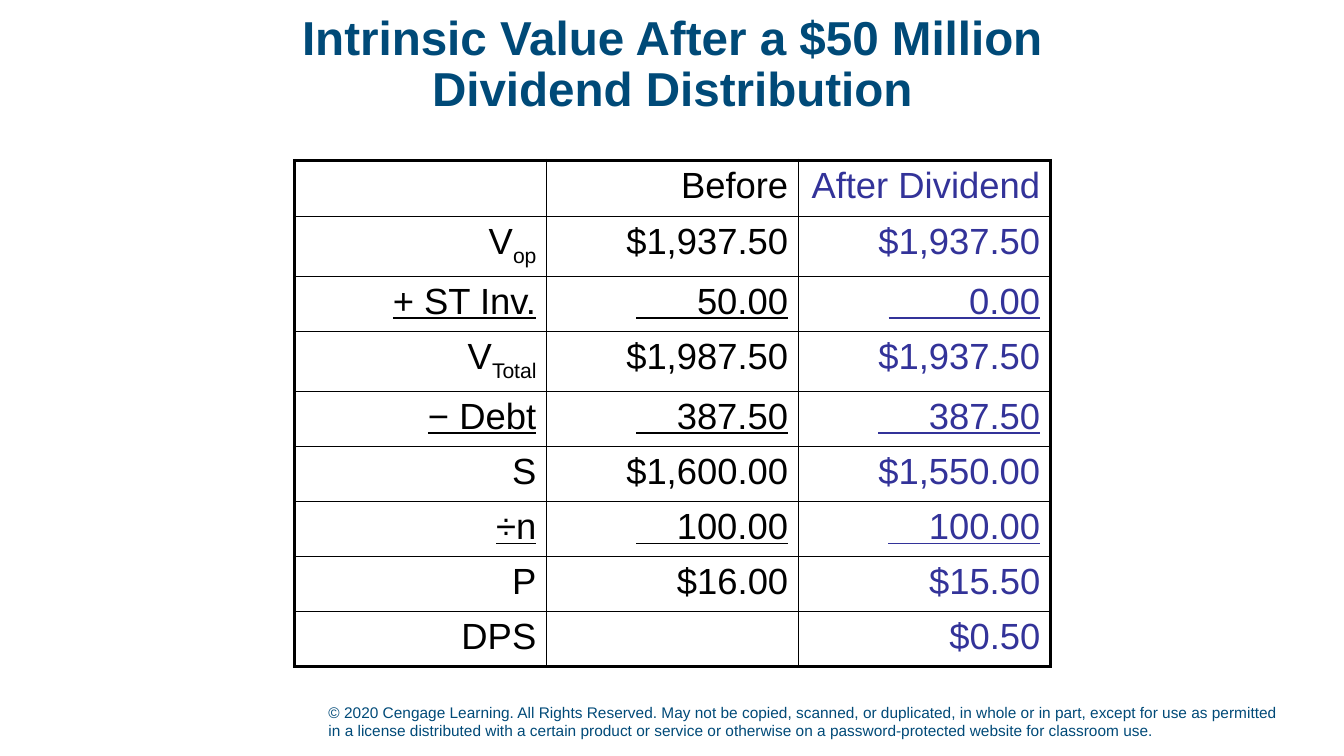
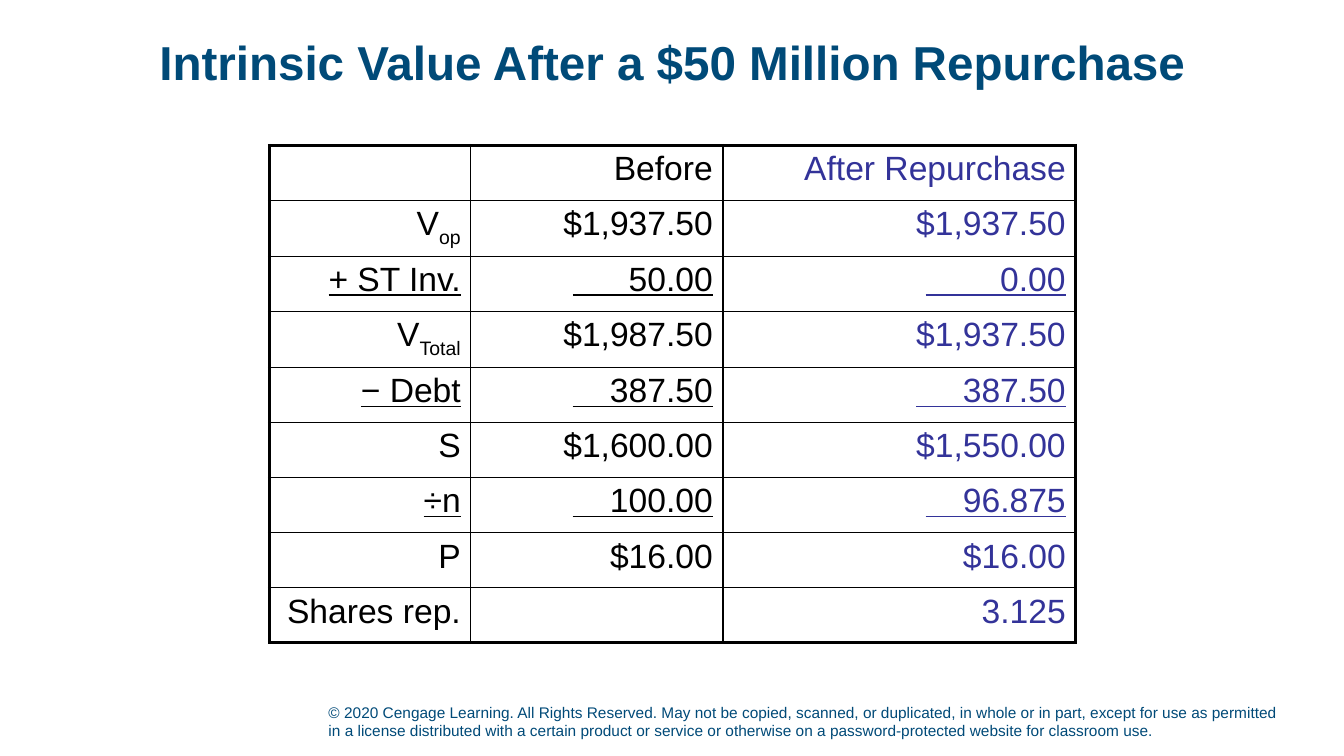
import pptx
import pptx.dml.color
import pptx.enum.text
import pptx.oxml
import pptx.oxml.ns
import pptx.util

Inches = pptx.util.Inches
Pt = pptx.util.Pt
ALIGN = pptx.enum.text.PP_ALIGN
ANCHOR = pptx.enum.text.MSO_ANCHOR

FONT = "Arial"
NAVY = "004A78"
BLACK = "000000"
INDIGO = "333399"
OUTER_RULE, INNER_RULE = 2.25, 1
ROW_HEIGHT = 4.92 / 9
TITLE_BOX = (0.92, 0.15, 11.5, 1)
FOOTER_BOX = (3.16, 6.89, 9.63, 0.5)
COPYRIGHT = (
    "© 2020 Cengage Learning. All Rights Reserved. May not be copied, scanned, or duplicated, "
    "in whole or in part, except for use as permitted in a license distributed with a certain "
    "product or service or otherwise on a password-protected website for classroom use."
)
BEFORE = ["Before", "$1,937.50", "      50.00", "$1,987.50", "    387.50",
          "$1,600.00", "    100.00", "$16.00", ""]
LABELS = ["", "V_op", "+ ST Inv.", "V_Total", "− Debt", "S", "÷n", "P"]
OPERATORS = ("+", "−", "÷")

DIVIDEND = {
    "title": "Intrinsic Value After a $50 Million\vDividend Distribution",
    "origin": (2.92, 1.59),
    "widths": (2.5, 2.5, 2.5),
    "header_height": 0.56,
    "size": 26,
    "last_label": "DPS",
    "after": ["After Dividend", "$1,937.50", "        0.00", "$1,937.50", "     387.50",
              "$1,550.00", "    100.00", "$15.50", "$0.50"],
}
REPURCHASE = {
    "title": "Intrinsic Value After a $50 Million Repurchase",
    "origin": (2.67, 1.44),
    "widths": (2, 2.5, 3.5),
    "header_height": ROW_HEIGHT,
    "size": 24,
    "last_label": "Shares rep.",
    "after": ["After Repurchase", "$1,937.50", "        0.00", "$1,937.50", "     387.50",
              "$1,550.00", "    96.875", "$16.00", "3.125"],
}


def style_font(font, size, color, bold=False):
    """Apply the shared typeface with a size and a hex colour."""
    font.name = FONT
    font.size = Pt(size)
    font.bold = bold
    font.color.rgb = pptx.dml.color.RGBColor.from_string(color)


def add_text(slide, box, text, size, anchor, align=ALIGN.LEFT, bold=False, spacing=1.0):
    """Place navy wrapped text in the given box."""
    frame = slide.shapes.add_textbox(*map(Inches, box)).text_frame
    frame.word_wrap = True
    frame.vertical_anchor = anchor
    paragraph = frame.paragraphs[0]
    paragraph.text = text
    paragraph.alignment = align
    paragraph.line_spacing = spacing
    for run in paragraph.runs:
        style_font(run.font, size, NAVY, bold)


def rule_cell(cell, row, column, last_row, last_column):
    """Draw thick rules on the table's edge and thin rules inside it."""
    edges = {"L": column == 0, "R": column == last_column, "T": row == 0, "B": row == last_row}
    properties = cell._tc.get_or_add_tcPr()
    for side, is_outer in edges.items():
        width = Pt(OUTER_RULE if is_outer else INNER_RULE)
        properties.append(pptx.oxml.parse_xml(
            f'<a:ln{side} {pptx.oxml.ns.nsdecls("a")} w="{width}" cap="flat" cmpd="sng">'
            f'<a:solidFill><a:srgbClr val="{BLACK}"/></a:solidFill>'
            f'<a:prstDash val="solid"/></a:ln{side}>'))
    cell.fill.background()


def fill_cell(cell, text, size, color, underlined):
    """Write a right-aligned entry, lowering whatever follows an underscore."""
    paragraph = cell.text_frame.paragraphs[0]
    paragraph.alignment = ALIGN.RIGHT
    style_font(paragraph.font, size, color)
    base, _, subscript = text.partition("_")
    for part in filter(None, (base, subscript)):
        run = paragraph.add_run()
        run.text = part
        style_font(run.font, size, color)
        if underlined:
            run.font.underline = True
    if subscript:
        run._r.get_or_add_rPr().set("baseline", "-25000")


def add_valuation_table(slide, content):
    """Build the before-and-after valuation table at its origin."""
    columns = (LABELS + [content["last_label"]], BEFORE, content["after"])
    widths = content["widths"]
    row_count = len(BEFORE)
    left, top = content["origin"]
    valuation = slide.shapes.add_table(
        row_count, len(columns), Inches(left), Inches(top),
        Inches(sum(widths)), Inches(ROW_HEIGHT * row_count)).table
    valuation.first_row = valuation.horz_banding = False
    for column, width in zip(valuation.columns, widths):
        column.width = Inches(width)
    for row in valuation.rows:
        row.height = Inches(ROW_HEIGHT)
    valuation.rows[0].height = Inches(content["header_height"])
    for row_index, entries in enumerate(zip(*columns)):
        underlined = entries[0].startswith(OPERATORS)
        for column_index, (entry, color) in enumerate(zip(entries, (BLACK, BLACK, INDIGO))):
            cell = valuation.cell(row_index, column_index)
            rule_cell(cell, row_index, column_index, row_count - 1, len(columns) - 1)
            fill_cell(cell, entry, content["size"], color, underlined)


def add_valuation_slide(deck, content):
    """Add a slide with title, valuation table and copyright footer."""
    slide = deck.slides.add_slide(deck.slide_layouts[6])
    add_text(slide, FOOTER_BOX, COPYRIGHT, 11, ANCHOR.BOTTOM)
    add_text(slide, TITLE_BOX, content["title"], 34, ANCHOR.MIDDLE, ALIGN.CENTER, True, 0.9)
    add_valuation_table(slide, content)


def main():
    """Build and save the deck."""
    deck = pptx.Presentation()
    deck.slide_width = Inches(13.33)
    deck.slide_height = Inches(7.5)
    for content in (DIVIDEND, REPURCHASE):
        add_valuation_slide(deck, content)
    deck.save("out.pptx")


if __name__ == "__main__":
    main()
